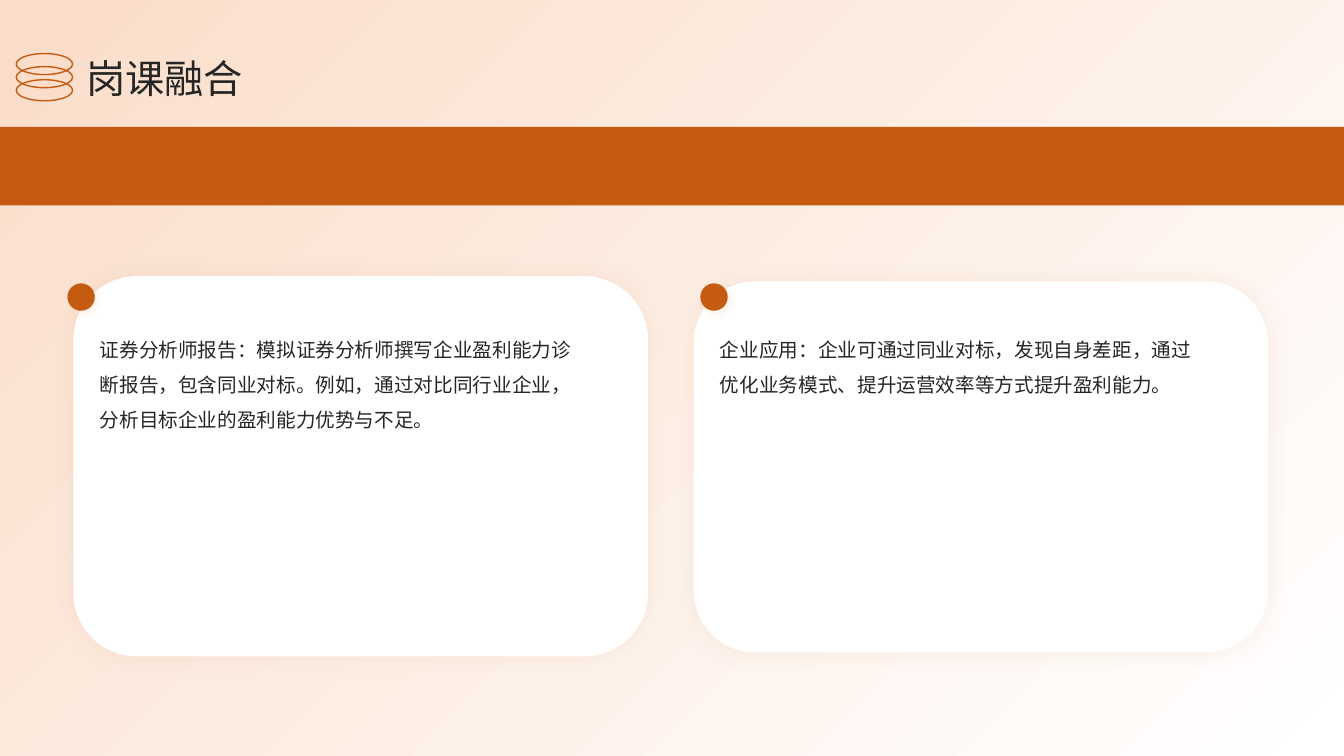
from dataclasses import dataclass

from lxml.etree import SubElement
from pptx import Presentation
from pptx.dml.color import RGBColor as RGB
from pptx.enum.shapes import MSO_SHAPE as Shape
from pptx.enum.text import MSO_ANCHOR as Anchor, MSO_AUTO_SIZE as AutoSize, PP_ALIGN as Align
from pptx.oxml.ns import qn
from pptx.util import Cm, Pt


@dataclass(frozen=True)
class Theme:
    accent: str = "C55A11"
    tint: str = "FADDC9"
    paper: str = "FFFFFF"
    ink: str = "262626"
    font: str = "Noto Sans CJK SC"
    title_size: int = 28
    body_size: int = 14


THEME = Theme()
SLIDE_W, SLIDE_H = 33.87, 19.05
TWO_CONTENT_LAYOUT = 3

# Each card: box (left, top, width, height), dot offset from its left edge, text
CARDS = [
    ((1.85, 6.96, 14.48, 9.58), -0.15,
     "证券分析师报告：模拟证券分析师撰写企业盈利能力诊断报告，包含同业对标。"
     "例如，通过对比同行业企业，分析目标企业的盈利能力优势与不足。"),
    ((17.48, 7.09, 14.48, 9.35), 0.17,
     "企业应用：企业可通过同业对标，发现自身差距，通过优化业务模式、"
     "提升运营效率等方式提升盈利能力。"),
]
TEXT_TOP, DOT_TOP, DOT_SIZE = 8.08, 7.14, 0.69


def add_panel(shapes, kind, box, fill=None, line=None):
    panel = shapes.add_shape(kind, *map(Cm, box))
    panel.shadow.inherit = False
    if fill:
        panel.fill.solid()
        panel.fill.fore_color.rgb = RGB.from_string(fill)
    else:
        panel.fill.background()
    if line:
        panel.line.color.rgb = RGB.from_string(line)
        panel.line.width = Pt(1)
    else:
        panel.line.fill.background()
    return panel


def add_shadow(panel, color, alpha, blur, distance=0, angle=0):
    effects = panel.element.spPr.find(qn("a:effectLst"))
    shadow = SubElement(effects, qn("a:outerShdw"), blurRad=str(Pt(blur)),
                        dist=str(Pt(distance)), dir=str(angle * 60000),
                        algn="ctr", rotWithShape="0")
    tone = SubElement(shadow, qn("a:srgbClr"), val=color)
    SubElement(tone, qn("a:alpha"), val=str(alpha * 1000))


def place_text(slide, holder, box, text, size, spacing, anchor):
    # Bring the placeholder in front of everything drawn so far
    slide.shapes.element.append(holder.element)
    holder.left, holder.top, holder.width, holder.height = map(Cm, box)
    frame = holder.text_frame
    frame.text = text
    frame.word_wrap = True
    frame.auto_size = AutoSize.NONE
    frame.vertical_anchor = anchor

    paragraph = frame.paragraphs[0]
    paragraph.alignment = Align.LEFT
    paragraph.line_spacing = spacing
    paragraph.space_before = Pt(0)
    properties = paragraph._p.get_or_add_pPr()
    properties.set("marL", "0")
    properties.set("indent", "0")
    SubElement(properties, qn("a:buNone"))

    font = paragraph.runs[0].font
    font.size = Pt(size)
    font.name = THEME.font
    font.color.rgb = RGB.from_string(THEME.ink)
    SubElement(font._element, qn("a:ea"), typeface=THEME.font)
    return frame


def draw_background(slide, box):
    backdrop = add_panel(slide.shapes, Shape.RECTANGLE, box)
    backdrop.fill.gradient()
    backdrop.fill.gradient_angle = 135
    for stop, color in zip(backdrop.fill.gradient_stops, (THEME.paper, THEME.tint)):
        stop.color.rgb = RGB.from_string(color)


def draw_card(slide, holder, box, dot_offset, text):
    left, _, width, _ = box
    card = add_panel(slide.shapes, Shape.ROUNDED_RECTANGLE, box, THEME.paper)
    add_shadow(card, THEME.accent, 8, 15)
    text_box = (left + 0.41, TEXT_TOP, width - 1.83, 7.26)
    place_text(slide, holder, text_box, text, THEME.body_size, 1.5, Anchor.TOP)
    dot_box = (left + dot_offset, DOT_TOP, DOT_SIZE, DOT_SIZE)
    dot = add_panel(slide.shapes, Shape.FLOWCHART_CONNECTOR, dot_box, THEME.accent)
    dot.rotation = 310.8
    add_shadow(dot, THEME.tint, 40, 4, 3, 45)


def draw_header(slide, box):
    left, top, width, height = box
    # Title
    title_box = (left + 2.18, top + 1.24, 29.64, 1.3)
    frame = place_text(slide, slide.shapes.title, title_box, "岗课融合",
                       THEME.title_size, 1.1, Anchor.MIDDLE)
    frame.margin_left = frame.margin_right = frame.margin_top = frame.margin_bottom = 0
    # Stacked rings, lowest first
    rings = slide.shapes.add_group_shape()
    for level in (2, 1, 0):
        ring_box = (left + 0.41, top + 1.35 + 0.33 * level, 1.42, 0.53)
        add_panel(rings.shapes, Shape.OVAL, ring_box, line=THEME.accent)
    # Band along the bottom of the header
    band_height = 1.98
    add_panel(slide.shapes, Shape.RECTANGLE,
              (left, top + height - band_height, width, band_height), THEME.accent)


def main():
    deck = Presentation()
    deck.slide_width, deck.slide_height = Cm(SLIDE_W), Cm(SLIDE_H)
    slide = deck.slides.add_slide(deck.slide_layouts[TWO_CONTENT_LAYOUT])
    bodies = [slide.placeholders[1], slide.placeholders[2]]

    draw_background(slide, (0, 0, SLIDE_W, SLIDE_H))
    for body, (box, dot_offset, text) in zip(bodies, CARDS):
        draw_card(slide, body, box, dot_offset, text)
    draw_header(slide, (0, 0, SLIDE_W, 5.18))
    deck.save("out.pptx")


if __name__ == "__main__":
    main()
